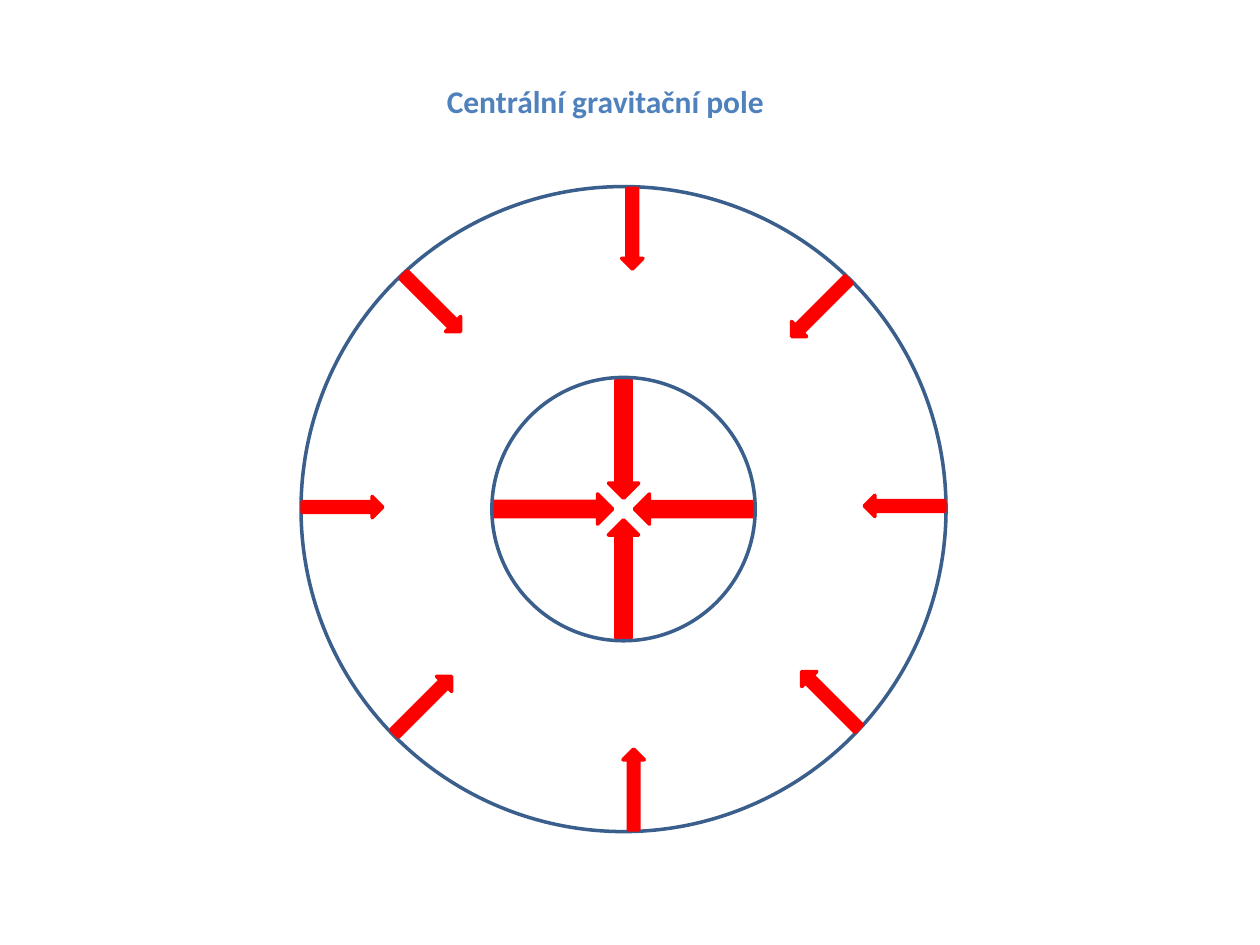
from dataclasses import dataclass

from pptx import Presentation
from pptx.dml.color import RGBColor
from pptx.enum.shapes import MSO_SHAPE
from pptx.enum.text import MSO_ANCHOR, MSO_AUTO_SIZE, PP_ALIGN
from pptx.util import Pt

ARROW, ELLIPSE = MSO_SHAPE.RIGHT_ARROW, MSO_SHAPE.OVAL
TOP, CENTER = MSO_ANCHOR.TOP, PP_ALIGN.CENTER
FIT_SHAPE = MSO_AUTO_SIZE.SHAPE_TO_FIT_TEXT


@dataclass(frozen=True)
class Theme:
    font: str = "Calibri"
    title_size: float = 18
    line_width: float = 2
    title: RGBColor = RGBColor(0x4F, 0x81, 0xBD)
    circle: RGBColor = RGBColor(0x3A, 0x5F, 0x8C)
    arrow: RGBColor = RGBColor(0xFF, 0x00, 0x00)


THEME = Theme()

# Arrow midpoints from the field centre in points, with the inward rotation
INNER_ARROWS = [(-40, 0, 0), (40, 0, 180), (0, -40, 90), (0, 40, 270)]
DIAGONAL_ARROWS = [(112.3, -114.9, 135), (-114.5, 111.9, 315),
                   (118.1, 109.1, 225), (-109.4, -117.7, 45)]
AXIS_ARROWS = [(160.6, -1.8, 180), (-160.6, -1.1, 0),
               (5.8, 160.2, 270), (5, -160.2, 90)]


def add_centered(shapes, kind, cx, cy, width, height, color):
    """Place an outlined shape by its midpoint."""
    sp = shapes.add_shape(kind, Pt(cx - width / 2), Pt(cy - height / 2),
                          Pt(width), Pt(height))
    sp.shadow.inherit = False
    sp.fill.background()
    sp.line.color.rgb = color
    sp.line.width = Pt(THEME.line_width)
    return sp


def add_circle(s, cx, cy, diameter):
    add_centered(s.shapes, ELLIPSE, cx, cy, diameter, diameter, THEME.circle)


def add_arrows(s, cx, cy, arrows, length, thickness):
    """Group arrows that point towards the centre."""
    group = s.shapes.add_group_shape()
    for dx, dy, rotation in arrows:
        sp = add_centered(group.shapes, ARROW, cx + dx, cy + dy,
                          length, thickness, THEME.arrow)
        sp.fill.solid()
        sp.fill.fore_color.rgb = THEME.arrow
        sp.rotation = rotation


def add_title(s, text, left, top, width, height):
    sp = s.shapes.title
    sp.left, sp.top, sp.width, sp.height = map(Pt, (left, top, width, height))
    tf = sp.text_frame
    tf.word_wrap = True
    tf.auto_size = FIT_SHAPE
    tf.vertical_anchor = TOP
    p = tf.paragraphs[0]
    p.alignment = CENTER
    r = p.add_run()
    r.text = text
    r.font.name = THEME.font
    r.font.size = Pt(THEME.title_size)
    r.font.bold = True
    r.font.color.rgb = THEME.title


def add_field(s, left, top, size):
    """Draw two equipotential circles with field vectors."""
    cx, cy = left + size / 2, top + size / 2
    add_arrows(s, cx, cy, INNER_ARROWS, 67.7, 17.3)
    add_circle(s, cx, cy, size)
    for arrows in (DIAGONAL_ARROWS, AXIS_ARROWS):
        add_arrows(s, cx, cy, arrows, 46.1, 12.2)
    add_circle(s, cx, cy, 150.5)


def main():
    prs = Presentation()
    prs.slide_width, prs.slide_height = Pt(720), Pt(540)
    s = prs.slides.add_slide(prs.slide_layouts[5])

    # Heading
    add_title(s, "Centrální gravitační pole", 54, 43.2, 583.9, 28.8)

    # Gravitational field diagram
    add_field(s, 172, 106.6, 368.6)

    prs.save("out.pptx")


if __name__ == "__main__":
    main()
